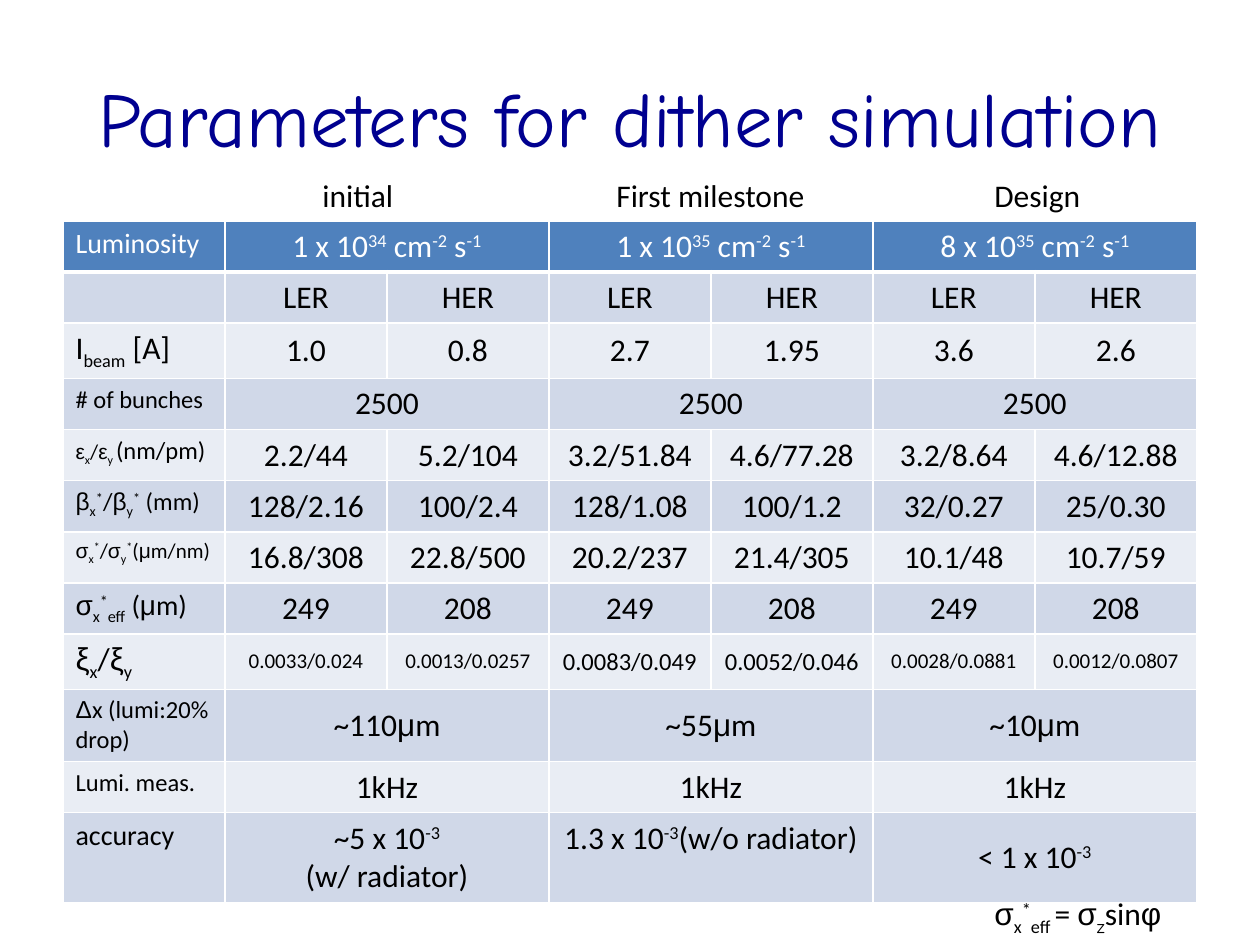
from itertools import groupby

from lxml.etree import SubElement
from pptx import Presentation
from pptx.dml.color import RGBColor
from pptx.enum.text import MSO_ANCHOR, MSO_AUTO_SIZE, PP_ALIGN
from pptx.oxml.ns import qn
from pptx.util import Emu, Pt

PX = 914400 / 126
WHITE = RGBColor(0xFF, 0xFF, 0xFF)
BLACK = RGBColor(0, 0, 0)
NAVY = RGBColor(0, 0, 0x90)
HEADER_BLUE = RGBColor(0x4F, 0x81, 0xBD)
BANDS = [RGBColor(0xE9, 0xED, 0xF4), RGBColor(0xD0, 0xD8, 0xE8)]

BODY_FONT = "Calibri"
GREEK_FONT = "Arial"
TITLE_FONT = "Comic Neue"
GREEK = "εβσμξΔφ"
BASELINES = {"^": "30000", "_": "-25000"}

ROWS = [
    ["@16Luminosity", "1 x 10|^34| cm|^-2| s|^-1",
     "1 x 10|^35| cm|^-2| s|^-1", "8 x 10|^35| cm|^-2| s|^-1"],
    ["", *["LER", "HER"] * 3],
    ["I|_beam| [A]", "1.0", "0.8", "2.7", "1.95", "3.6", "2.6"],
    ["@14# of bunches", *["2500"] * 3],
    ["@12ε|_x|/ε|_y |@14(nm/pm)", "2.2/44", "5.2/104", "3.2/51.84",
     "4.6/77.28", "3.2/8.64", "4.6/12.88"],
    ["@14β|_x|^*|/β|_y|^*| (mm)", "128/2.16", "100/2.4", "128/1.08",
     "100/1.2", "32/0.27", "25/0.30"],
    ["@12σ|_x|^*|/σ|_y|^*|(μm/nm)", "16.8/308", "22.8/500", "20.2/237",
     "21.4/305", "10.1/48", "10.7/59"],
    ["@16σ|_x|^*|_eff| (μm)", *["249", "208"] * 3],
    ["ξ|_x|/ξ|_y", "@120.0033/0.024", "@120.0013/0.0257", "@140.0083/0.049",
     "@140.0052/0.046", "@120.0028/0.0881", "@120.0012/0.0807"],
    ["@14Δx (lumi:20% drop)", "~110μm", "~55μm", "~10μm"],
    ["@14Lumi. meas.", *["1kHz"] * 3],
    ["@16accuracy", "~5 x 10|^-3\n(w/ radiator)",
     "1.3 x 10|^-3|(w/o radiator)", "< 1 x 10|^-3"],
]


def px(*lengths):
    return [Emu(round(length * PX)) for length in lengths]


def add_span(para, text, size, color, font, baseline=None):
    span = para.add_run()
    span.text = text
    span.font.size = Pt(size)
    span.font.name = font
    span.font.color.rgb = color
    if baseline:
        span.font._element.set("baseline", baseline)
    return span


def write_markup(frame, markup, color=BLACK, align=PP_ALIGN.LEFT):
    size = 18
    for index, line in enumerate(markup.split("\n")):
        para = frame.add_paragraph() if index else frame.paragraphs[0]
        para.alignment = align
        for part in filter(None, line.split("|")):
            baseline = BASELINES.get(part[0])
            if baseline:
                part = part[1:]
            elif part[0] == "@":
                size, part = int(part[1:3]), part[3:]
            for is_greek, letters in groupby(part, lambda letter: letter in GREEK):
                font = GREEK_FONT if is_greek else BODY_FONT
                add_span(para, "".join(letters), size, color, font, baseline)


def add_title(page, text):
    title = page.shapes.title
    title.left, title.top, title.width, title.height = px(63, 38, 1134, 158)
    title.text_frame.vertical_anchor = MSO_ANCHOR.MIDDLE
    para = title.text_frame.paragraphs[0]
    para.alignment = PP_ALIGN.CENTER
    add_span(para, text, 44, NAVY, TITLE_FONT)


def add_label(page, left, top, width, markup):
    box = page.shapes.add_textbox(*px(left, top, width, 50))
    box.text_frame.word_wrap = False
    box.text_frame.auto_size = MSO_AUTO_SIZE.SHAPE_TO_FIT_TEXT
    write_markup(box.text_frame, markup)
    return box


def style_cell(cell, fill, bottom_width):
    cell.fill.solid()
    cell.fill.fore_color.rgb = fill
    properties = cell._tc.get_or_add_tcPr()
    for index, side in enumerate("LRTB"):
        width = bottom_width if side == "B" else 1
        line = SubElement(properties, qn(f"a:ln{side}"), w=str(Pt(width)))
        paint = SubElement(line, qn("a:solidFill"))
        SubElement(paint, qn("a:srgbClr"), val=str(WHITE))
        properties.insert(index, line)


def add_parameter_table(page):
    frame = page.shapes.add_table(len(ROWS), 7, *px(63, 221, 1134, 670))
    table = frame.table
    table.first_row = table.horz_banding = False
    for column in table.columns:
        column.width = px(162)[0]
    for number, (row, (label, *values)) in enumerate(zip(table.rows, ROWS)):
        row.height = px(51)[0]
        is_header = number == 0
        for cell in row.cells:
            style_cell(cell, HEADER_BLUE if is_header else BANDS[number % 2],
                       3 if is_header else 1)
        color = WHITE if is_header else BLACK
        write_markup(table.cell(number, 0).text_frame, label, color)
        step = 6 // len(values)
        for index, value in enumerate(values):
            column = 1 + index * step
            cell = table.cell(number, column)
            if step > 1:
                cell.merge(table.cell(number, column + step - 1))
            cell.vertical_anchor = MSO_ANCHOR.MIDDLE
            write_markup(cell.text_frame, value, color, PP_ALIGN.CENTER)
    table.cell(len(ROWS) - 1, 3).vertical_anchor = MSO_ANCHOR.TOP


def main():
    deck = Presentation()
    deck.slide_width, deck.slide_height = px(1260, 945)
    page = deck.slides.add_slide(deck.slide_layouts[5])
    add_title(page, "Parameters for dither simulation")
    add_parameter_table(page)
    formula = add_label(page, 982, 888, 198, "σ|_x|^*|_eff |= σ|_z|sinφ")
    for span in formula.text_frame.paragraphs[0].runs:
        if span.text == "z":
            span.font.name = TITLE_FONT
    for left, width, stage in [(310, 97, "initial"), (604, 217, "First milestone"),
                               (982, 112, "Design")]:
        add_label(page, left, 170, width, stage)
    deck.save("out.pptx")


if __name__ == "__main__":
    main()
